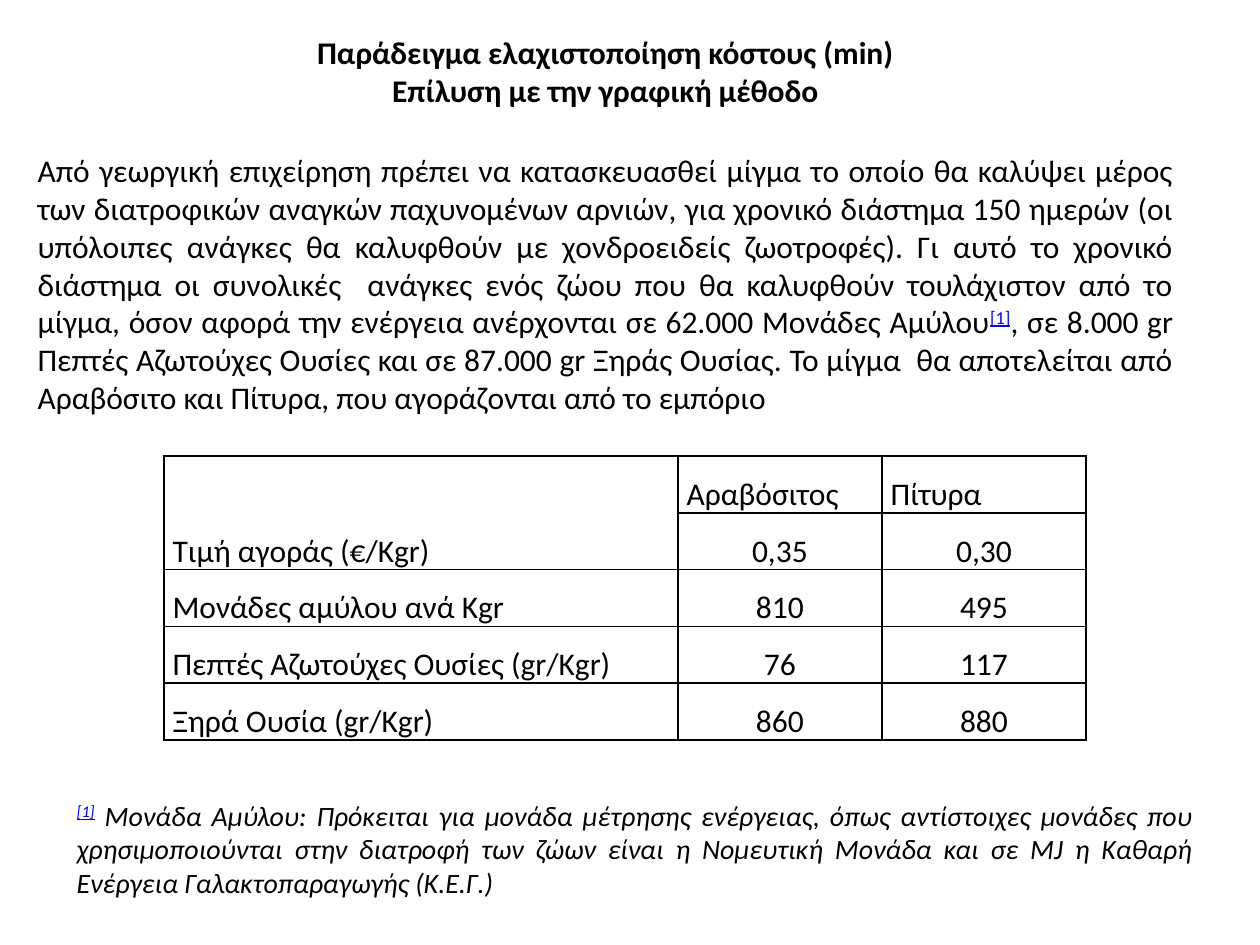
from pptx import Presentation, util as u
from pptx.dml.color import RGBColor
from pptx.enum import text
from pptx.oxml import ns, xmlchemy
from dataclasses import dataclass


@dataclass(frozen=True)
class Theme:
    font: str = "Calibri"
    ink: str = "000000"
    link: str = "0000FF"
    body_size: int = 18
    note_size: int = 16
    thick: float = 1.5
    thin: float = 1


THEME = Theme()
ALIGN = text.PP_ALIGN
MARK = "[1]"

TITLE = ["Παράδειγμα ελαχιστοποίηση κόστους (min)", "Επίλυση με την γραφική μέθοδο"]
PROBLEM = [
    "Από γεωργική επιχείρηση πρέπει να κατασκευασθεί μίγμα το οποίο θα καλύψει μέρος "
    "των διατροφικών αναγκών παχυνομένων αρνιών, για χρονικό διάστημα 150 ημερών (οι "
    "υπόλοιπες ανάγκες θα καλυφθούν με χονδροειδείς ζωοτροφές). Γι αυτό το χρονικό "
    "διάστημα οι συνολικές  ανάγκες ενός ζώου που θα καλυφθούν τουλάχιστον από το "
    "μίγμα, όσον αφορά την ενέργεια ανέρχονται σε 62.000 Μονάδες Αμύλου",
    MARK,
    ", σε 8.000 gr Πεπτές Αζωτούχες Ουσίες και σε 87.000 gr Ξηράς Ουσίας. Το μίγμα  "
    "θα αποτελείται από Αραβόσιτο και Πίτυρα, που αγοράζονται από το εμπόριο",
]
FOOTNOTE = [
    MARK,
    " Μονάδα Αμύλου: Πρόκειται για μονάδα μέτρησης ενέργειας, όπως αντίστοιχες μονάδες "
    "που χρησιμοποιούνται στην διατροφή των ζώων είναι η Νομευτική Μονάδα και σε MJ η "
    "Καθαρή Ενέργεια Γαλακτοπαραγωγής (Κ.Ε.Γ.)",
]
FEEDS = [
    ("", "Αραβόσιτος", "Πίτυρα"),
    ("Τιμή αγοράς (€/Kgr)", "0,35", "0,30"),
    ("Μονάδες αμύλου ανά Kgr", "810", "495"),
    ("Πεπτές Αζωτούχες Ουσίες (gr/Kgr)", "76", "117"),
    ("Ξηρά Ουσία (gr/Kgr)", "860", "880"),
]

TITLE_AREA = (0.2, 0.21, 9.21, 0.71)
PROBLEM_AREA = (0.2, 1.13, 9.21, 2.24)
FOOTNOTE_AREA = (0.51, 6.28, 9.06, 0.91)
TABLE_ORIGIN = (1.3, 3.62)
COLUMN_WIDTHS = (4.08, 1.62, 1.62)
ROW_HEIGHT = 0.45


def inches(values):
    return [u.Inches(value) for value in values]


def style(span, size, bold=False, italic=False, color=THEME.ink):
    font = span.font
    font.name, font.size, font.bold, font.italic = THEME.font, u.Pt(size), bold, italic
    font.color.rgb = RGBColor.from_string(color)


def add_passage(page, area, pieces, size, italic=False):
    frame = page.shapes.add_textbox(*inches(area)).text_frame
    frame.word_wrap = True
    frame.vertical_anchor = text.MSO_ANCHOR.MIDDLE
    para = frame.paragraphs[0]
    para.alignment = ALIGN.JUSTIFY
    for piece in pieces:
        span = para.add_run()
        span.text = piece
        is_mark = piece == MARK
        style(span, size, italic=italic, color=THEME.link if is_mark else THEME.ink)
        if is_mark:
            span.font.underline = True
            span.font._element.set("baseline", "30000")


def add_title(page):
    title = page.shapes.title
    title.left, title.top, title.width, title.height = inches(TITLE_AREA)
    frame = title.text_frame
    frame.text = "\n".join(TITLE)
    frame.auto_size = text.MSO_AUTO_SIZE.NONE
    frame.vertical_anchor = text.MSO_ANCHOR.MIDDLE
    for para in frame.paragraphs:
        para.alignment = ALIGN.CENTER
        style(para.runs[0], THEME.body_size, bold=True)


def border_widths(row, column):
    last_row, last_column = len(FEEDS) - 1, len(COLUMN_WIDTHS) - 1
    header_rule = THEME.thick if column else 0
    inner_top = header_rule if row == 1 else THEME.thin
    inner_bottom = header_rule if row == 0 else THEME.thin
    return {
        "L": THEME.thin if column else THEME.thick,
        "R": THEME.thick if column == last_column else THEME.thin,
        "T": inner_top if row else THEME.thick,
        "B": THEME.thick if row == last_row else inner_bottom,
    }


def draw_borders(cell, widths):
    properties = cell._tc.get_or_add_tcPr()
    for side, width in widths.items():
        line = xmlchemy.OxmlElement(f"a:ln{side}")
        line.set("w", str(u.Pt(width)))
        if width:
            fill = xmlchemy.OxmlElement("a:solidFill")
            color = xmlchemy.OxmlElement("a:srgbClr")
            color.set("val", THEME.ink)
            fill.append(color)
        else:
            fill = xmlchemy.OxmlElement("a:noFill")
        line.append(fill)
        properties.append(line)


def add_feed_table(page):
    size = (sum(COLUMN_WIDTHS), ROW_HEIGHT * len(FEEDS))
    frame = page.shapes.add_table(
        len(FEEDS), len(COLUMN_WIDTHS), *inches(TABLE_ORIGIN + size))
    table = frame.table
    table.first_row = table.horz_banding = False
    for column, width in zip(table.columns, COLUMN_WIDTHS):
        column.width = u.Inches(width)
    for row, values in enumerate(FEEDS):
        table.rows[row].height = u.Inches(ROW_HEIGHT)
        for column, value in enumerate(values):
            cell = table.cell(row, column)
            draw_borders(cell, border_widths(row, column))
            cell.fill.background()
            cell.margin_left = cell.margin_right = u.Inches(0.07)
            cell.margin_top = cell.margin_bottom = 0
            if value:
                para = cell.text_frame.paragraphs[0]
                para.text = value
                para.alignment = ALIGN.CENTER if row and column else ALIGN.JUSTIFY
                para.line_spacing = 1.5
                para.space_before = u.Pt(12)
                style(para.runs[0], THEME.body_size)


def main():
    deck = Presentation()
    deck.slide_width, deck.slide_height = inches((10, 7.5))
    page = deck.slides.add_slide(deck.slide_layouts.get_by_name("Title Only"))
    add_title(page)
    add_passage(page, PROBLEM_AREA, PROBLEM, THEME.body_size)
    add_passage(page, FOOTNOTE_AREA, FOOTNOTE, THEME.note_size, italic=True)
    add_feed_table(page)
    deck.save("out.pptx")


if __name__ == "__main__":
    main()
